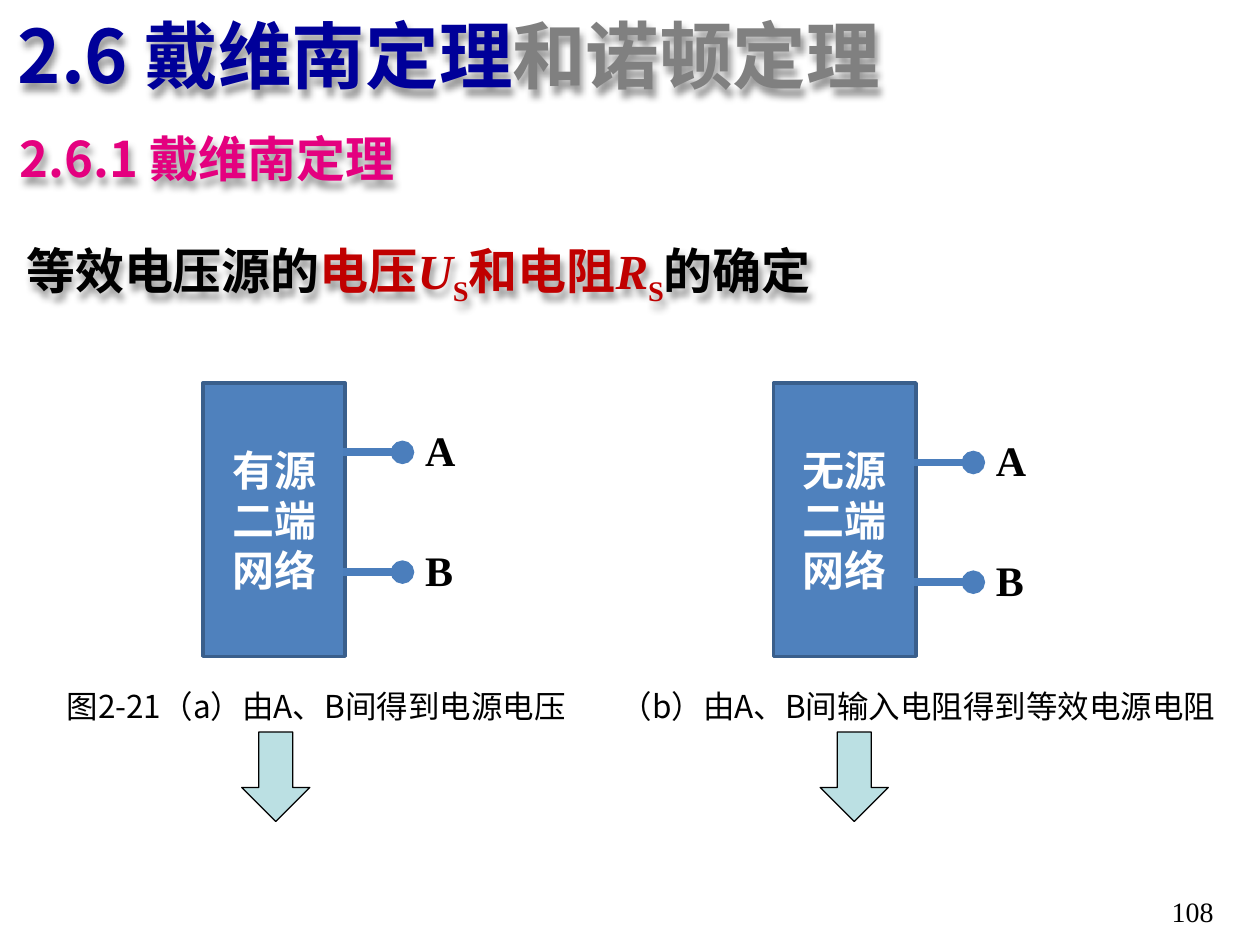
from dataclasses import dataclass
from typing import NamedTuple

from lxml.etree import SubElement
from pptx import Presentation
from pptx.dml.color import RGBColor
from pptx.enum.shapes import MSO_CONNECTOR as Connector, MSO_SHAPE as Preset
from pptx.enum.text import MSO_ANCHOR as Anchor, MSO_AUTO_SIZE as AutoSize, PP_ALIGN as Align
from pptx.oxml.ns import qn
from pptx.util import Pt


@dataclass(frozen=True)
class Theme:
    """Colours, fonts and type sizes of the slide."""
    navy: str = "000099"
    grey: str = "808080"
    pink: str = "E4007F"
    red: str = "C00000"
    black: str = "000000"
    white: str = "FFFFFF"
    box_fill: str = "4F81BD"
    box_line: str = "3A5F8C"
    wire: str = "4B7EBC"
    arrow_fill: str = "BBE0E3"
    chinese: str = "Noto Sans CJK SC"
    serif: str = "Times New Roman"
    sans: str = "Calibri"
    title_size: float = 42
    heading_size: float = 28
    label_size: float = 24
    caption_size: float = 18
    number_size: float = 16


class Frame(NamedTuple):
    """Left, top, width and height in points."""
    left: float
    top: float
    width: float
    height: float


class Network(NamedTuple):
    """A two-terminal network, its first terminal height and its arrow."""
    name: str
    left: float
    terminal_top: float
    arrow_left: float


THEME = Theme()
NETWORKS = (
    Network("有源二端网络", 115.9, 258.5, 138.2),
    Network("无源二端网络", 442.1, 264.3, 468.7),
)
TERMINAL_GAP = 68.4


def color(value: str) -> RGBColor:
    """Turn a hexadecimal value into a colour."""
    return RGBColor.from_string(value)


def write(paragraph, text: str, *, size: float, ink: str = THEME.black,
          font: str = THEME.chinese, bold: bool = False, italic: bool = False,
          baseline: int = 0) -> None:
    """Append one formatted run to a paragraph."""
    run = paragraph.add_run()
    run.text = text
    run.font.size = Pt(size)
    run.font.name = font
    run.font.bold = bold
    run.font.italic = italic
    run.font.color.rgb = color(ink)
    properties = run.font._element
    SubElement(properties, qn("a:ea")).set("typeface", THEME.chinese)
    if baseline:
        properties.set("baseline", str(baseline * 1000))


def add_text_box(slide, frame: Frame, align: Align = Align.LEFT, wrap: bool = True):
    """Add a text box that grows with its text."""
    shape = slide.shapes.add_textbox(*map(Pt, frame))
    shape.text_frame.word_wrap = wrap
    shape.text_frame.auto_size = AutoSize.SHAPE_TO_FIT_TEXT
    shape.text_frame.paragraphs[0].alignment = align
    return shape


def add_soft_shadow(shape) -> None:
    """Give the text of an unfilled shape a soft shadow below it."""
    shape.fill.background()
    effects = SubElement(shape._element.spPr, qn("a:effectLst"))
    shadow = SubElement(effects, qn("a:outerShdw"), blurRad=str(Pt(4)),
                        dist=str(Pt(4)), dir="4500000", algn="tl", rotWithShape="0")
    ink = SubElement(shadow, qn("a:srgbClr"), val=THEME.black)
    SubElement(ink, qn("a:alpha"), val="40000")


def add_preset(slide, preset: Preset, frame: Frame, fill: str, line: str, weight: float):
    """Add a filled and outlined preset shape."""
    shape = slide.shapes.add_shape(preset, *map(Pt, frame))
    shape.shadow.inherit = False
    shape.fill.solid()
    shape.fill.fore_color.rgb = color(fill)
    shape.line.color.rgb = color(line)
    shape.line.width = Pt(weight)
    return shape


def add_terminal(slide, label: str, left: float, top: float) -> None:
    """Draw a wire with a round end and its letter."""
    wire = slide.shapes.add_connector(
        Connector.STRAIGHT, Pt(left), Pt(top), Pt(left + 33.8), Pt(top))
    wire.line.color.rgb = color(THEME.wire)
    wire.line.width = Pt(4.5)
    SubElement(wire.line._get_or_add_ln(), qn("a:tailEnd"), type="oval")
    SubElement(wire._element.spPr, qn("a:effectLst"))
    box = add_text_box(slide, Frame(left + 39.6, top - 19.4, 30.2, 36))
    write(box.text_frame.paragraphs[0], label,
          size=THEME.label_size, font=THEME.serif, bold=True)


def add_network(slide, network: Network) -> None:
    """Draw a network box with terminals A and B and the arrow below."""
    box = add_preset(slide, Preset.RECTANGLE, Frame(network.left, 218.9, 81.4, 156.2),
                     THEME.box_fill, THEME.box_line, 2)
    box.text_frame.word_wrap = True
    box.text_frame.vertical_anchor = Anchor.MIDDLE
    paragraph = box.text_frame.paragraphs[0]
    paragraph.alignment = Align.CENTER
    write(paragraph, network.name, size=THEME.label_size, ink=THEME.white,
          font=THEME.sans, bold=True)
    for index, label in enumerate("AB"):
        add_terminal(slide, label, network.left + 80.3,
                     network.terminal_top + index * TERMINAL_GAP)
    add_preset(slide, Preset.DOWN_ARROW, Frame(network.arrow_left, 418.3, 38.9, 51.1),
               THEME.arrow_fill, THEME.black, 0.75)


def add_title(slide) -> None:
    """Place and format the title."""
    title = slide.shapes.title
    title.left, title.top, title.width, title.height = map(Pt, Frame(2.9, 2.2, 657.4, 58.3))
    title.text_frame.word_wrap = True
    title.text_frame.auto_size = AutoSize.SHAPE_TO_FIT_TEXT
    title.text_frame.vertical_anchor = Anchor.TOP
    paragraph = title.text_frame.paragraphs[0]
    paragraph.alignment = Align.LEFT
    for text, ink in (("2.6 戴维南定理", THEME.navy), ("和诺顿定理", THEME.grey)):
        write(paragraph, text, size=THEME.title_size, ink=ink, bold=True)
    add_soft_shadow(title)


def add_headings(slide) -> None:
    """Add the section heading and the topic line with its symbols."""
    section = add_text_box(slide, Frame(4.3, 69.8, 241.9, 41), wrap=False)
    write(section.text_frame.paragraphs[0], "2.6.1 戴维南定理",
          size=THEME.heading_size, ink=THEME.pink, bold=True)
    add_soft_shadow(section)

    topic = add_text_box(slide, Frame(7.9, 133.9, 472.3, 41))
    paragraph = topic.text_frame.paragraphs[0]
    style = {"size": THEME.heading_size, "bold": True}
    write(paragraph, "等效电压源的", **style)
    for quantity, symbol in (("电压", "U"), ("和电阻", "R")):
        write(paragraph, quantity, ink=THEME.red, **style)
        write(paragraph, symbol, ink=THEME.red, font=THEME.serif, italic=True, **style)
        write(paragraph, "S", ink=THEME.red, font=THEME.serif, baseline=-25, **style)
    write(paragraph, "的确定", **style)
    add_soft_shadow(topic)


def main() -> None:
    """Build and save the slide."""
    presentation = Presentation()
    presentation.slide_width, presentation.slide_height = Pt(720), Pt(540)
    slide = presentation.slides.add_slide(presentation.slide_layouts[5])
    add_title(slide)
    add_headings(slide)
    for network in NETWORKS:
        add_network(slide, network)
    for text, frame, align, size, font in (
        ("图2-21（a）由A、B间得到电源电压", Frame(31, 388.8, 299.5, 28.8),
         Align.LEFT, THEME.caption_size, THEME.chinese),
        ("（b）由A、B间输入电阻得到等效电源电阻 ", Frame(345.6, 388.8, 360, 28.8),
         Align.RIGHT, THEME.caption_size, THEME.chinese),
        ("108", Frame(598.3, 507.6, 102.2, 28.8),
         Align.RIGHT, THEME.number_size, THEME.serif),
    ):
        box = add_text_box(slide, frame, align)
        write(box.text_frame.paragraphs[0], text, size=size, font=font)
    presentation.save("out.pptx")


if __name__ == "__main__":
    main()
